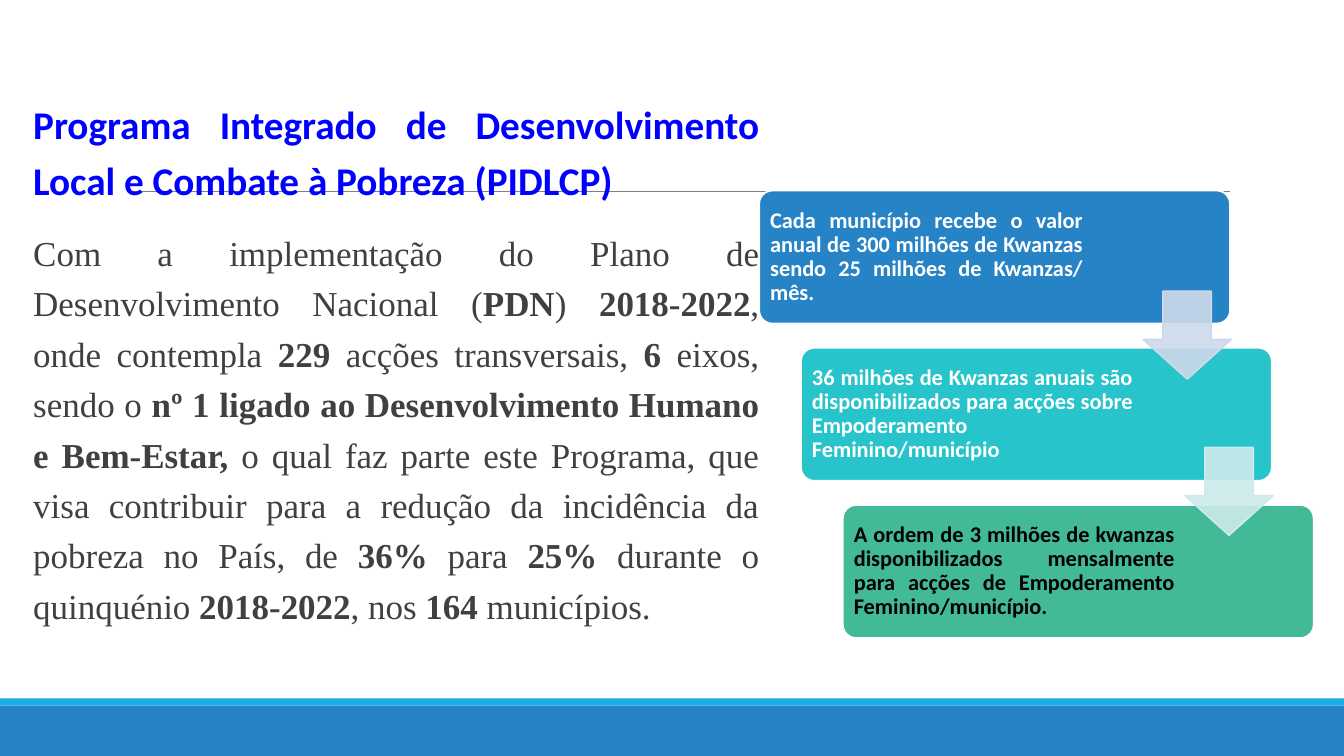
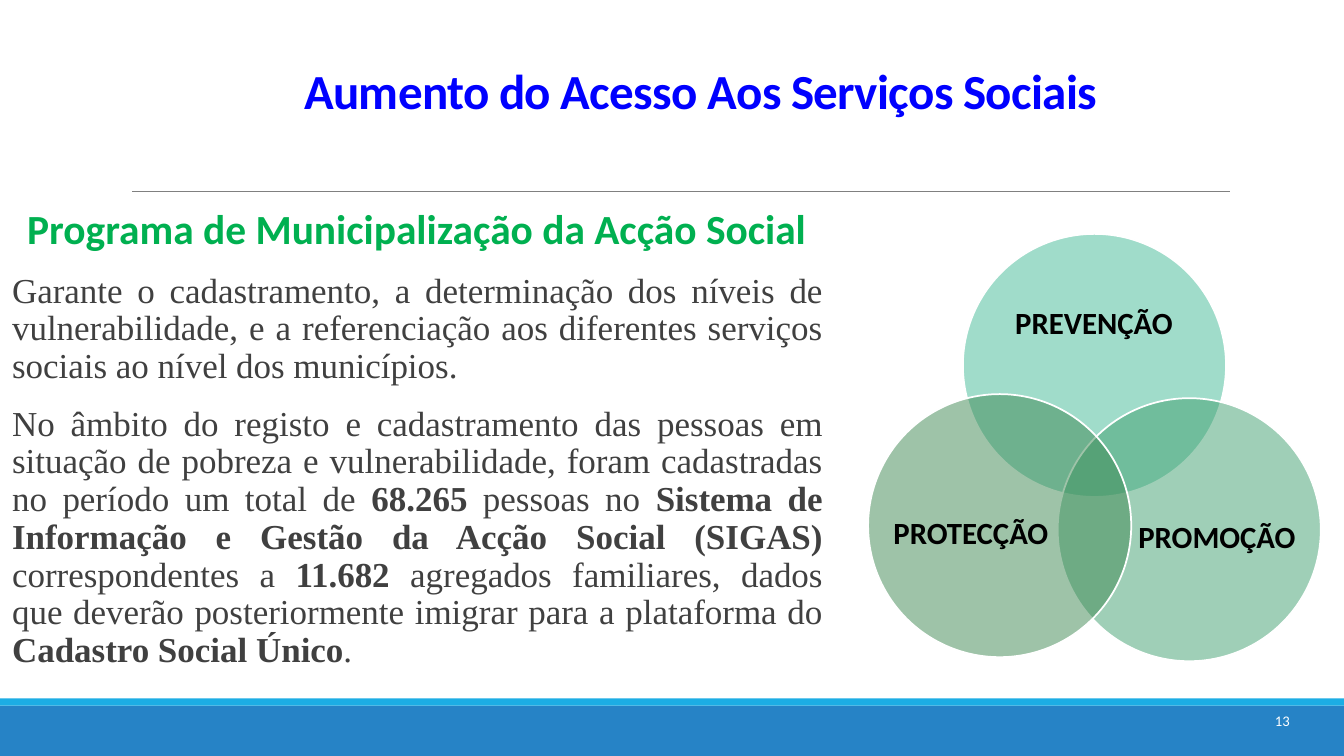
from lxml.etree import SubElement
from pptx import Presentation
from pptx.dml.color import RGBColor
from pptx.enum.shapes import MSO_CONNECTOR, MSO_SHAPE
from pptx.enum.text import MSO_ANCHOR, PP_ALIGN
from pptx.oxml.ns import qn
from pptx.util import Inches, Pt

COLORS = {
    "band": "2683C6", "stripe": "1CADE4", "rule": "808080",
    "title": "0000FF", "heading": "00B050", "body": "404040",
    "white": "FFFFFF", "black": "000000",
    "turquoise": "28C4CC", "green": "42BA97",
    "pale_blue": "CDD9EA", "pale_turquoise": "CDEAEC",
    "mid_green": "41A070", "dark_green": "3E8853",
}
SERIF = "Times New Roman"


def add_block(page, kind, left, top, width, height, fill, line=None, opacity=100):
    shape = page.shapes.add_shape(
        kind, Inches(left), Inches(top), Inches(width), Inches(height))
    shape.shadow.inherit = False
    shape.fill.solid()
    shape.fill.fore_color.rgb = RGBColor.from_string(COLORS[fill])
    if opacity < 100:
        color = shape.fill._xPr.find(qn("a:solidFill"))[0]
        SubElement(color, qn("a:alpha"), val=str(opacity * 1000))
    if line:
        shape.line.color.rgb = RGBColor.from_string(COLORS[line])
        shape.line.width = Pt(1.25)
    else:
        shape.line.fill.background()
    return shape


def write(page, text, box=None, shape=None, size=16, color="black", font="Calibri",
          bold=False, align=PP_ALIGN.CENTER, anchor=MSO_ANCHOR.MIDDLE, spacing=0.9,
          before=0, after=0, margins=(0, 0, 0, 0), tracking=None):
    """Add a paragraph to a shape or a new text box; ** switches bold on and off."""
    is_first = shape is None or not shape.text_frame.text
    if shape is None:
        shape = page.shapes.add_textbox(*[Inches(length) for length in box])
    frame = shape.text_frame
    if is_first:
        frame.word_wrap = True
        frame.vertical_anchor = anchor
        (frame.margin_left, frame.margin_top,
         frame.margin_right, frame.margin_bottom) = [Inches(m) for m in margins]
    para = frame.paragraphs[0] if is_first else frame.add_paragraph()
    para.alignment = align
    para.line_spacing = spacing
    para.space_before, para.space_after = Pt(before), Pt(after)
    for index, part in enumerate(text.split("**")):
        if not part:
            continue
        span = para.add_run()
        span.text = part
        span.font.name = font
        span.font.size = Pt(size)
        span.font.bold = bold or index % 2 == 1
        span.font.color.rgb = RGBColor.from_string(COLORS[color])
        if tracking:
            span.font._element.set("spc", str(int(tracking * 100)))
    return shape


deck = Presentation()
deck.slide_width, deck.slide_height = Inches(13.33), Inches(7.5)
pages = [deck.slides.add_slide(deck.slide_layouts[6]) for _ in range(2)]

# Shared bands and rule
for page in pages:
    add_block(page, MSO_SHAPE.RECTANGLE, 0, 7, 13.33, 0.5, "band")
    add_block(page, MSO_SHAPE.RECTANGLE, 0, 6.93, 13.33, 0.07, "stripe")
    rule = page.shapes.add_connector(
        MSO_CONNECTOR.STRAIGHT, Inches(1.31), Inches(1.9), Inches(12.2), Inches(1.9))
    rule.line.color.rgb = RGBColor.from_string(COLORS["rule"])
    rule.line.width = Pt(0.5)
    SubElement(rule._element.spPr, qn("a:effectLst"))

program_page, access_page = pages
body_format = dict(size=25, color="body", font=SERIF, align=PP_ALIGN.JUSTIFY,
                   before=12, after=2)

# Local development programme
program = write(
    program_page, "Programa Integrado de Desenvolvimento Local e Combate à Pobreza (PIDLCP)",
    box=(0.33, 0.85, 7.2, 5.62), size=28, color="title", bold=True,
    align=PP_ALIGN.JUSTIFY, anchor=MSO_ANCHOR.TOP, spacing=1.2, after=2,
    margins=(0, 0.05, 0, 0.05))
write(
    program_page,
    "Com a implementação do Plano de Desenvolvimento Nacional (**PDN**) **2018-2022**, "
    "onde contempla **229 **acções transversais, **6 **eixos, sendo o **nº 1 ligado ao "
    "Desenvolvimento Humano e Bem-Estar,** o qual faz parte este Programa, que visa "
    "contribuir para a redução da incidência da pobreza no País, de **36%** para **25%** "
    "durante o quinquénio **2018-2022**, nos **164** municípios.",
    shape=program, spacing=1.2, **body_format)

STEP_X, STEP_Y = 0.415, 1.56
steps = [
    ("Cada município recebe o valor anual de 300 milhões de Kwanzas sendo "
     "25 milhões de Kwanzas/ mês.", "band", "white", 1.42),
    ("36 milhões de Kwanzas anuais são disponibilizados para acções sobre "
     "Empoderamento Feminino/município", "turquoise", "white", 1.34),
    ("A ordem de 3 milhões de kwanzas disponibilizados mensalmente para acções de "
     "Empoderamento Feminino/município.", "green", "black", 1.34),
]
for index, (text, fill, color, right_margin) in enumerate(steps):
    card = add_block(program_page, MSO_SHAPE.ROUNDED_RECTANGLE, 7.53 + STEP_X * index,
                     1.89 + STEP_Y * index, 4.67, 1.32, fill, line="white")
    card.adjustments[0] = 0.1
    write(program_page, text, shape=card, color=color, bold=True,
          align=PP_ALIGN.JUSTIFY, margins=(0.07, 0.07, right_margin, 0.07))

for index, fill in enumerate(["pale_blue", "pale_turquoise"]):
    arrow = add_block(program_page, MSO_SHAPE.DOWN_ARROW, 11.34 + STEP_X * index,
                      2.89 + 1.55 * index, 0.87, 0.87, fill, line=fill, opacity=90)
    arrow.adjustments[0], arrow.adjustments[1] = 0.55, 0.45

# Access to social services
write(access_page, "Aumento do Acesso Aos Serviços Sociais", box=(1.06, 0.28, 11.78, 0.95),
      size=35, color="title", bold=True, anchor=MSO_ANCHOR.BOTTOM, spacing=0.85,
      margins=(0.1, 0.05, 0.1, 0.05), tracking=-0.5)
services = write(
    access_page, "Programa de Municipalização da Acção Social", box=(0.12, 2.02, 8.04, 4.68),
    size=29.6, color="heading", bold=True, anchor=MSO_ANCHOR.TOP, after=2,
    margins=(0, 0.05, 0, 0.05))
for text in [
    "Garante o cadastramento, a determinação dos níveis de vulnerabilidade, e a "
    "referenciação aos diferentes serviços sociais ao nível dos municípios.",
    "No âmbito do registo e cadastramento das pessoas em situação de pobreza e "
    "vulnerabilidade, foram cadastradas no período um total de **68.265** pessoas no "
    "**Sistema de Informação e Gestão da Acção Social (SIGAS) **correspondentes a "
    "**11.682** agregados familiares, dados que deverão posteriormente imigrar para a "
    "plataforma do **Cadastro Social Único**.",
]:
    write(access_page, text, shape=services, spacing=0.9, **body_format)

write(access_page, "13", box=(9.78, 6.95, 3.11, 0.4), size=10.5, color="white",
      align=PP_ALIGN.RIGHT, spacing=1, margins=(0.1, 0.05, 0.1, 0.05))

DIAMETER = 2.61
LABEL_WIDTH, LABEL_HEIGHT = 1.9, 0.5
# Label, colour, circle corner, label centre
circles = [
    ("PREVENÇÃO", "green", (9.55, 2.32), (10.85, 3.22)),
    ("PROMOÇÃO", "mid_green", (10.49, 3.95), (12.07, 5.34)),
    ("PROTECÇÃO", "dark_green", (8.61, 3.91), (9.63, 5.3)),
]
for label, fill, (left, top), (center_x, center_y) in circles:
    add_block(access_page, MSO_SHAPE.OVAL, left, top, DIAMETER, DIAMETER, fill,
              line="white", opacity=50)
    write(access_page, label, size=22, bold=True,
          box=(center_x - LABEL_WIDTH / 2, center_y - LABEL_HEIGHT / 2,
               LABEL_WIDTH, LABEL_HEIGHT))

deck.save("out.pptx")
